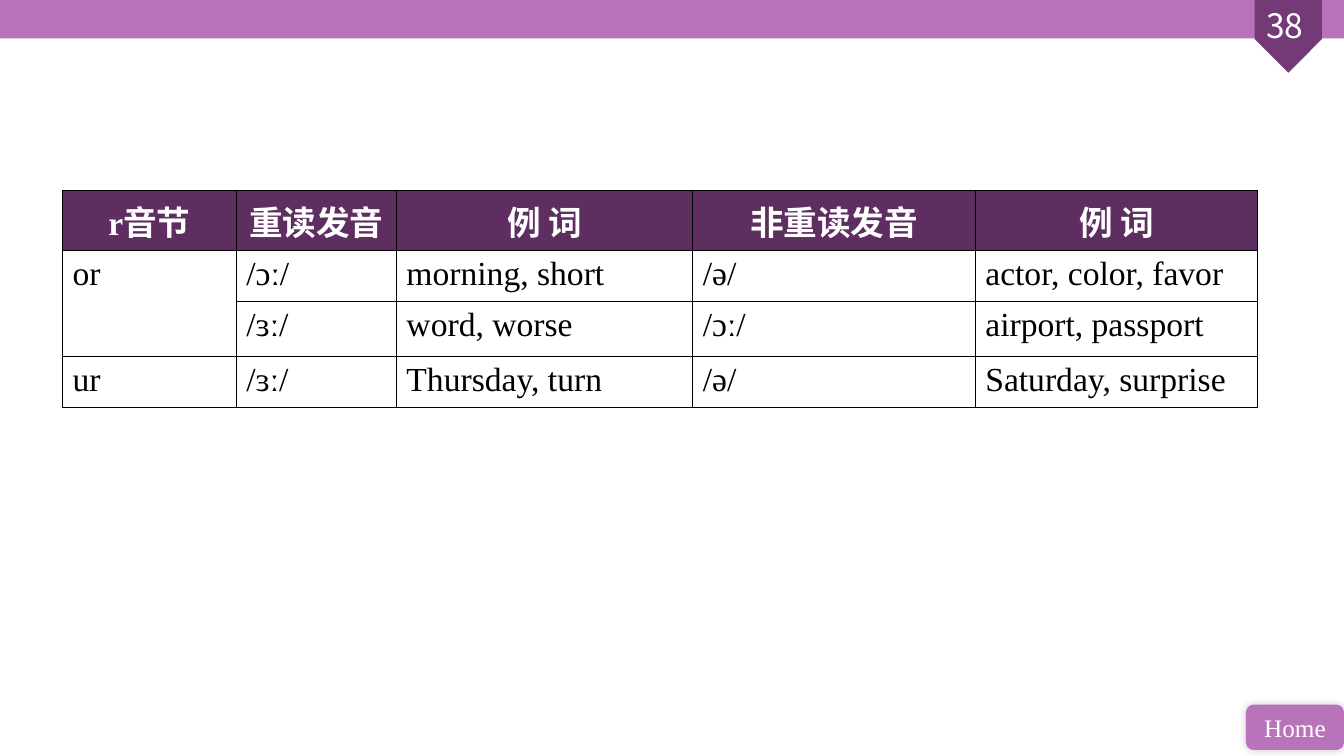
from lxml import etree
from pptx import Presentation
from pptx.dml.color import RGBColor
from pptx.enum.shapes import MSO_SHAPE
from pptx.enum.text import MSO_ANCHOR, PP_ALIGN
from pptx.oxml import parse_xml
from pptx.oxml.ns import qn
from pptx.util import Pt

RECTANGLE = MSO_SHAPE.RECTANGLE
PENTAGON = MSO_SHAPE.PENTAGON
ROUNDED = MSO_SHAPE.ROUNDED_RECTANGLE
CENTER, LEFT = PP_ALIGN.CENTER, PP_ALIGN.LEFT
TOP, MIDDLE = MSO_ANCHOR.TOP, MSO_ANCHOR.MIDDLE
SERIF, CJK = "Times New Roman", "Noto Sans CJK SC"
NAMESPACE = "http://schemas.openxmlformats.org/drawingml/2006/main"


def color(value):
    return RGBColor.from_string(value)


def write(text_frame, text, size, font_name, font_color, alignment=CENTER, bold=False):
    text_frame.text = text
    paragraph = text_frame.paragraphs[0]
    paragraph.alignment = alignment
    run = paragraph.runs[0]
    run.font.size = Pt(size)
    run.font.bold = bold
    run.font.color.rgb = color(font_color)
    run.font.name = font_name
    etree.SubElement(run.font._element, qn("a:ea"), typeface=CJK)


presentation = Presentation()
presentation.slide_width, presentation.slide_height = Pt(960), Pt(540)
slide = presentation.slides.add_slide(presentation.slide_layouts[6])

# Top band, page marker and home button
decorations = [
    (RECTANGLE, 0, 0, 960, 27.4, 0, "B873BB"),
    (PENTAGON, 894.2, 2, 52, 48, 90, "743A78"),
    (ROUNDED, 890, 503.3, 70, 32.4, 0, "B873BB"),
]
for kind, left, top, width, height, rotation, fill in decorations:
    shape = slide.shapes.add_shape(kind, Pt(left), Pt(top), Pt(width), Pt(height))
    shape.rotation = rotation
    shape.shadow.inherit = False
    shape.fill.solid()
    shape.fill.fore_color.rgb = color(fill)
    shape.line.fill.background()

# The button is the last shape of the loop
home_button = shape
home_button.text_frame.vertical_anchor = MIDDLE
write(home_button.text_frame, "Home", 18, SERIF, "FFFFFF")
effects = home_button._element.spPr.find(qn("a:effectLst"))
effects.append(parse_xml(
    f'<a:outerShdw xmlns:a="{NAMESPACE}" blurRad="{Pt(6)}" dist="0" dir="18900000">'
    '<a:srgbClr val="000000"><a:alpha val="20000"/></a:srgbClr></a:outerShdw>'))

# Page number
page_number = slide.shapes.add_textbox(Pt(882.5), Pt(0), Pt(70.6), Pt(36))
page_number.text_frame.word_wrap = True
write(page_number.text_frame, "38", 24, CJK, "FFFFFF")

# Pronunciation table
rows = [
    ["r音节", "重读发音", "例 词", "非重读发音", "例 词"],
    ["or", "/ɔː/", "morning, short", "/ə/", "actor, color, favor"],
    ["", "/ɜː/", "word, worse", "/ɔː/", "airport, passport"],
    ["ur", "/ɜː/", "Thursday, turn", "/ə/", "Saturday, surprise"],
]
column_widths = [124.2, 114.4, 211.7, 201.8, 201.8]
row_heights = [43, 36.2, 39.6, 36]
table = slide.shapes.add_table(
    len(rows), len(column_widths), Pt(44.6), Pt(136),
    Pt(sum(column_widths)), Pt(sum(row_heights))).table
for column, width in zip(table.columns, column_widths):
    column.width = Pt(width)
for row, height in zip(table.rows, row_heights):
    row.height = Pt(height)
table.cell(1, 0).merge(table.cell(2, 0))

for row_index, row_texts in enumerate(rows):
    header = row_index == 0
    for column_index, text in enumerate(row_texts):
        cell = table.cell(row_index, column_index)
        cell.vertical_anchor = MIDDLE if header else TOP
        properties = cell._tc.get_or_add_tcPr()
        for side in ("lnL", "lnR", "lnT", "lnB"):
            properties.append(parse_xml(
                f'<a:{side} xmlns:a="{NAMESPACE}" w="{Pt(1)}"><a:solidFill>'
                f'<a:srgbClr val="000000"/></a:solidFill></a:{side}>'))
        if header:
            cell.fill.solid()
            cell.fill.fore_color.rgb = color("5D2E5F")
        else:
            cell.fill.background()
        if text:
            write(cell.text_frame, text, 24, SERIF, "FFFFFF" if header else "000000",
                  CENTER if header else LEFT, header)

presentation.save("out.pptx")
